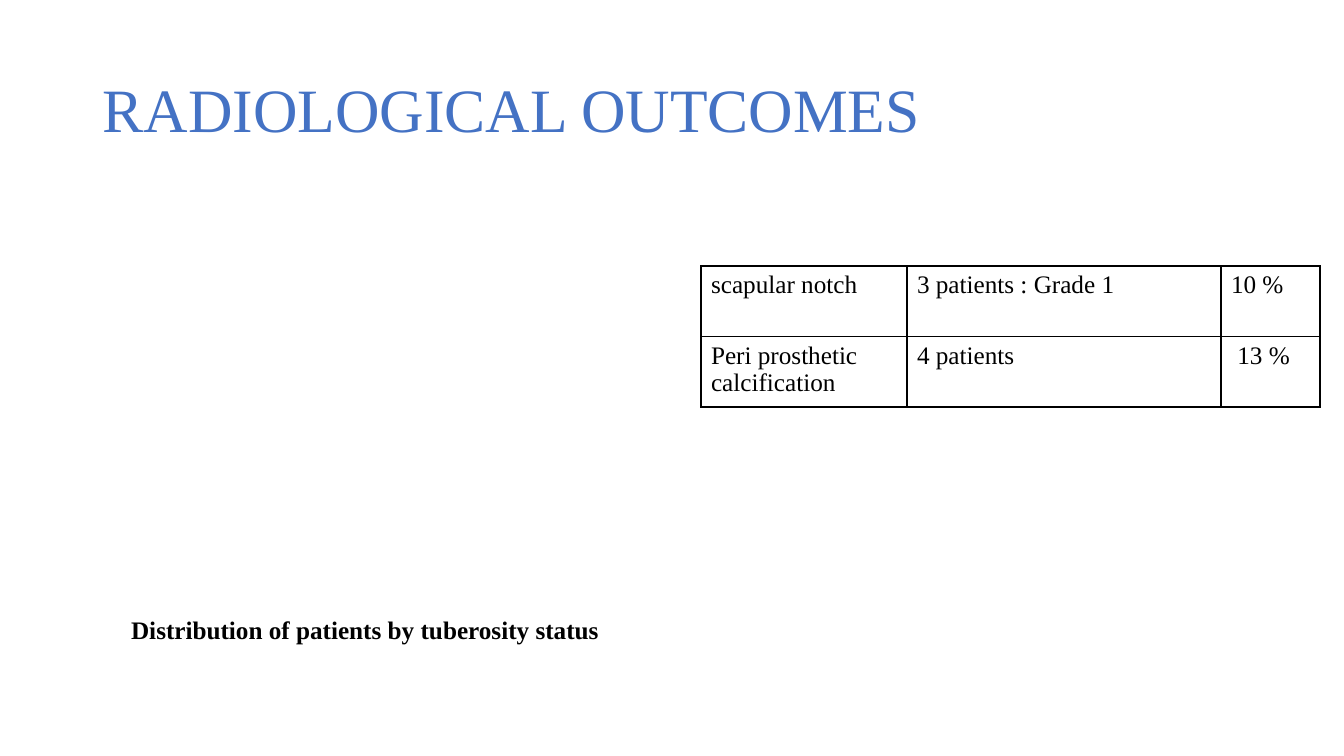
from dataclasses import dataclass

from lxml.etree import SubElement
from pptx import Presentation
from pptx.dml.color import RGBColor
from pptx.enum.text import MSO_ANCHOR as Anchor, PP_ALIGN as Align
from pptx.oxml.ns import qn
from pptx.util import Emu, Pt


@dataclass(frozen=True)
class Theme:
    font: str = "Times New Roman"
    title_color: str = "4472C4"
    text_color: str = "000000"
    title_size: int = 44
    body_size: int = 18
    border_width: int = 1


@dataclass(frozen=True)
class Box:
    left: int
    top: int
    width: int
    height: int

    def emu(self):
        return [px(n) for n in (self.left, self.top, self.width, self.height)]


THEME = Theme()
PX_PER_INCH = 100.8
PAGE = Box(0, 0, 1344, 756)
FINDINGS = [
    ["scapular notch", "3 patients : Grade 1", "10 %"],
    ["Peri prosthetic calcification", "4 patients", " 13 %"],
]
COLUMN_WIDTHS = [206, 314, 99]


def px(count):
    return Emu(round(count * 914400 / PX_PER_INCH))


def apply_format(target, values):
    for name, value in values.items():
        setattr(target, name, value)


def write_text(frame, text, size, color, bold=False, para_format=None):
    para = frame.paragraphs[0]
    apply_format(para, para_format or {})
    span = para.add_run()
    span.text = text
    apply_format(span.font, {"name": THEME.font, "size": Pt(size), "bold": bold})
    span.font.color.rgb = RGBColor.from_string(color)


def add_title(page, box):
    frame = page.shapes.add_textbox(*box.emu()).text_frame
    apply_format(frame, {"word_wrap": True, "vertical_anchor": Anchor.MIDDLE})
    write_text(frame, "RADIOLOGICAL OUTCOMES", THEME.title_size, THEME.title_color,
               para_format={"line_spacing": 0.9})


def add_caption(page, box):
    frame = page.shapes.add_textbox(*box.emu()).text_frame
    frame.word_wrap = True
    write_text(frame, "Distribution of patients by tuberosity status",
               THEME.body_size, THEME.text_color, bold=True,
               para_format={"alignment": Align.CENTER, "line_spacing": 1.5,
                            "space_before": Pt(6), "space_after": Pt(6)})


def draw_borders(cell):
    properties = cell._tc.get_or_add_tcPr()
    for position, side in enumerate(("lnL", "lnR", "lnT", "lnB")):
        line = properties.makeelement(qn(f"a:{side}"), {"w": str(Pt(THEME.border_width))})
        properties.insert(position, line)
        fill = SubElement(line, qn("a:solidFill"))
        SubElement(fill, qn("a:srgbClr"), val=THEME.text_color)


def add_findings_table(page, box):
    table = page.shapes.add_table(len(FINDINGS), len(COLUMN_WIDTHS), *box.emu()).table
    apply_format(table, {"first_row": False, "horz_banding": False})
    for column, width in zip(table.columns, COLUMN_WIDTHS):
        column.width = px(width)
    for row, texts in zip(table.rows, FINDINGS):
        row.height = px(box.height / len(FINDINGS))
        for cell, text in zip(row.cells, texts):
            cell.fill.background()
            draw_borders(cell)
            write_text(cell.text_frame, text, THEME.body_size, THEME.text_color)


def build_outcomes_page(deck, box):
    page = deck.slides.add_slide(deck.slide_layouts[6])
    add_title(page, Box(box.left + 93, box.top + 40, 1159, 146))
    add_caption(page, Box(box.left + 29, box.top + 594, 672, 50))
    add_findings_table(page, Box(box.left + 701, box.top + 266, sum(COLUMN_WIDTHS), 141))


def main():
    deck = Presentation()
    apply_format(deck, {"slide_width": px(PAGE.width), "slide_height": px(PAGE.height)})
    build_outcomes_page(deck, PAGE)
    deck.save("out.pptx")


if __name__ == "__main__":
    main()
